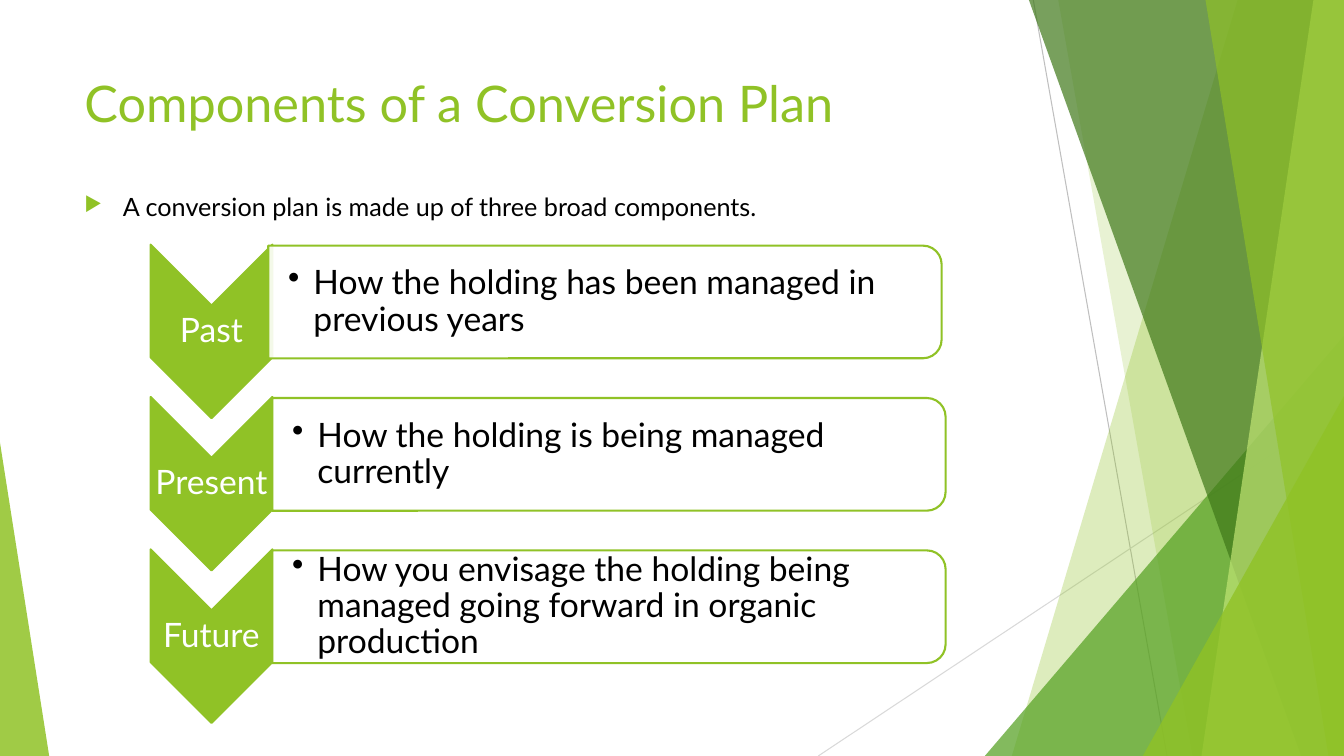
from lxml import etree
from pptx import Presentation, util as u
from pptx.dml.color import RGBColor
from pptx.enum import shapes, text
from pptx.oxml.ns import qn

WIDTH, HEIGHT = 33.87, 19.05
FONT = "Lato"
COLOURS = {
    "lime": "90C226", "green": "54A021", "forest": "3F7819", "pale": "C0E474",
    "white": "FFFFFF", "black": "000000", "grey": "BFBFBF", "light grey": "D9D9D9",
}
TITLE = "Components of a Conversion Plan"
INTRO = "A conversion plan is made up of three broad components."
# stage, description, left edge of the description bar
STAGES = [
    ("Past", "How the holding has been managed in previous years", 6.76),
    ("Present", "How the holding is being managed currently", 6.86),
    ("Future", "How you envisage the holding being managed going forward in organic production", 6.86),
]
# x1, y1, x2, y2, colour
RAYS = [(26.04, 0, 29.41, HEIGHT, "grey"), (WIDTH, 10.24, 20.62, HEIGHT, "light grey")]
# A band runs to the right edge: ("band", top x, bottom x, colour, opacity).
# A wedge stands on the bottom edge: ("wedge", left, top, width, apex, colour, opacity).
FACETS = [
    ("band", 31.19, 25.5, "lime", 30),
    ("band", 26.67, 30.05, "lime", 20),
    ("wedge", 24.82, 8.46, 9.05, 1, "green", 72),
    ("band", 25.93, 32.79, "forest", 70),
    ("band", 33.1, 30.28, "pale", 70),
    ("band", 30.38, 33.48, "lime", 65),
    ("wedge", 28.8, 9.98, 5.07, 1, "lime", 80),
    ("wedge", 0, 11.15, 1.24, 0, "lime", 85),
]
FIRST_CENTRE, PITCH = 8.35, 3.84
CHEVRON_X, CHEVRON_LENGTH, CHEVRON_BREADTH = 5.33, 4.37, 3.07
BAR_LENGTH, BAR_HEIGHT, BAR_RISE = 16.97, 2.84, 0.74


def colour(name):
    return RGBColor.from_string(COLOURS[name])


def paint(shape, fill, opacity=100, line=None):
    shape.shadow.inherit = False
    shape.fill.solid()
    shape.fill.fore_color.rgb = colour(fill)
    if opacity < 100:
        srgb = shape.fill._xPr.find(".//" + qn("a:srgbClr"))
        etree.SubElement(srgb, qn("a:alpha"), val=str(opacity * 1000))
    if line:
        shape.line.color.rgb = colour(line)
        shape.line.width = u.Pt(1.5)
    else:
        shape.line.fill.background()


def add_ray(slide, x1, y1, x2, y2, tint):
    ray = slide.shapes.add_connector(shapes.MSO_CONNECTOR.STRAIGHT, *map(u.Cm, (x1, y1, x2, y2)))
    ray.line.color.rgb = colour(tint)
    ray.line.width = u.Pt(0.75)
    etree.SubElement(ray._element.spPr, qn("a:effectLst"))


def add_band(slide, top_x, bottom_x, tint, opacity):
    builder = slide.shapes.build_freeform(u.Cm(top_x), 0)
    corners = [(WIDTH, 0), (WIDTH, HEIGHT), (bottom_x, HEIGHT)]
    builder.add_line_segments([(u.Cm(x), u.Cm(y)) for x, y in corners])
    paint(builder.convert_to_shape(), tint, opacity)


def add_wedge(slide, left, top, width, apex, tint, opacity):
    wedge = slide.shapes.add_shape(
        shapes.MSO_SHAPE.ISOSCELES_TRIANGLE, *map(u.Cm, (left, top, width, HEIGHT - top)))
    wedge.adjustments[0] = apex
    paint(wedge, tint, opacity)


def add_turned(slide, kind, centre_x, centre_y, length, breadth):
    """Add a shape turned by 90 degrees around its centre."""
    shape = slide.shapes.add_shape(
        kind, *map(u.Cm, (centre_x - length / 2, centre_y - breadth / 2, length, breadth)))
    shape.rotation = 90
    return shape


def add_text(slide, words, box, size, tint, frame=None, paragraph_format=None, bullet=None):
    """Add a text box; bullet is (character, indent in cm, attributes of colour and size)."""
    text_frame = slide.shapes.add_textbox(*map(u.Cm, box)).text_frame
    text_frame.word_wrap = True
    for name, value in (frame or {}).items():
        setattr(text_frame, name, value)
    paragraph = text_frame.paragraphs[0]
    for name, value in (paragraph_format or {}).items():
        setattr(paragraph, name, value)
    run = paragraph.add_run()
    run.text = words
    for name, value in {"name": FONT, "size": u.Pt(size)}.items():
        setattr(run.font, name, value)
    run.font.color.rgb = colour(tint)
    if bullet:
        character, indent, bullet_tint, percent = bullet
        properties = paragraph._p.get_or_add_pPr()
        properties.set("marL", str(u.Cm(indent)))
        properties.set("indent", str(-u.Cm(indent)))
        holder = etree.SubElement(properties, qn("a:buClr"))
        etree.SubElement(holder, qn("a:srgbClr"), val=COLOURS[bullet_tint])
        etree.SubElement(properties, qn("a:buSzPct"), val=str(percent * 1000))
        etree.SubElement(properties, qn("a:buChar"), char=character)


def add_stage(slide, index, stage, description, bar_left):
    centre = FIRST_CENTRE + index * PITCH
    bar_centre = centre - BAR_RISE
    inset = u.Cm(0.05)
    frame = {"vertical_anchor": text.MSO_ANCHOR.MIDDLE, "margin_left": inset,
             "margin_right": inset, "margin_top": inset, "margin_bottom": inset}

    chevron = add_turned(slide, shapes.MSO_SHAPE.CHEVRON, CHEVRON_X, centre,
                         CHEVRON_LENGTH, CHEVRON_BREADTH)
    paint(chevron, "lime", line="lime")
    label_box = (CHEVRON_X - CHEVRON_BREADTH / 2, centre - 0.66, CHEVRON_BREADTH, 1.32)
    add_text(slide, stage, label_box, 24, "white", frame,
             {"alignment": text.PP_ALIGN.CENTER, "line_spacing": 0.9})

    bar = add_turned(slide, shapes.MSO_SHAPE.ROUND_2_SAME_RECTANGLE,
                     bar_left + BAR_LENGTH / 2, bar_centre, BAR_HEIGHT, BAR_LENGTH)
    paint(bar, "white", 90, "lime")
    description_box = (bar_left + 0.02, bar_centre - 1.28, 16.81, 2.56)
    add_text(slide, description, description_box, 24, "black",
             {**frame, "margin_left": u.Cm(0.48)}, {"line_spacing": 0.9},
             ("•", 0.64, "black", 100))


def main():
    presentation = Presentation()
    presentation.slide_width, presentation.slide_height = u.Cm(WIDTH), u.Cm(HEIGHT)
    slide = presentation.slides.add_slide(presentation.slide_layouts[6])
    for ray in RAYS:
        add_ray(slide, *ray)
    adders = {"band": add_band, "wedge": add_wedge}
    for kind, *facet in FACETS:
        adders[kind](slide, *facet)
    add_text(slide, TITLE, (1.88, 1.7, 23.88, 3.66), 36, "lime")
    add_text(slide, INTRO, (1.88, 4.7, 23.88, 12.09), 18, "black",
             bullet=("▶", 0.97, "lime", 80))
    for index, stage in enumerate(STAGES):
        add_stage(slide, index, *stage)
    presentation.save("out.pptx")


if __name__ == "__main__":
    main()
